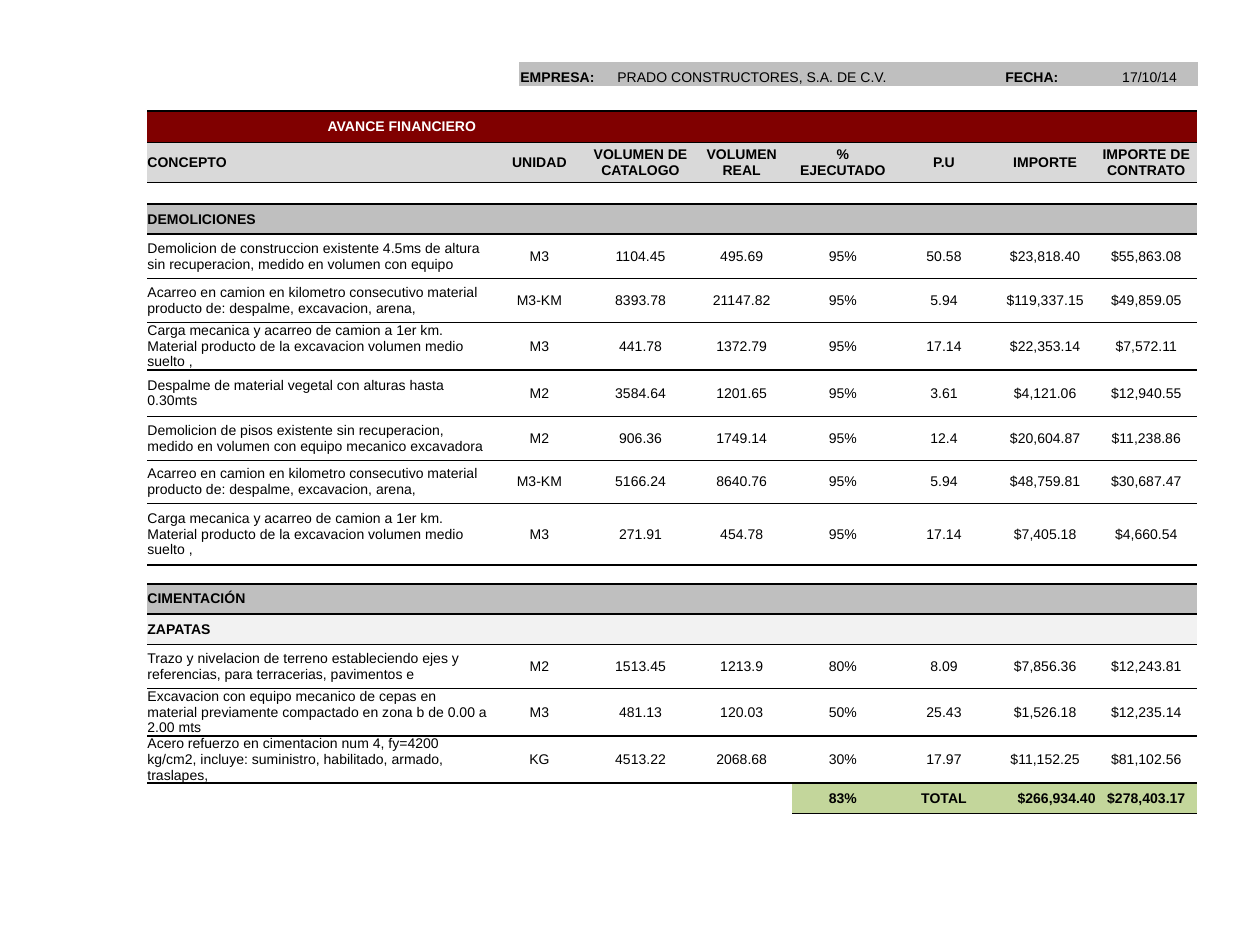
from lxml import etree
from pptx import Presentation
from pptx.dml.color import RGBColor
from pptx.enum.text import MSO_ANCHOR, PP_ALIGN
from pptx.oxml.ns import qn
from pptx.util import Inches, Pt

LEFT, CENTER, RIGHT = PP_ALIGN.LEFT, PP_ALIGN.CENTER, PP_ALIGN.RIGHT
MIDDLE, BOTTOM = MSO_ANCHOR.MIDDLE, MSO_ANCHOR.BOTTOM

BLACK = RGBColor(0x00, 0x00, 0x00)
WHITE = RGBColor(0xFF, 0xFF, 0xFF)
MAROON = RGBColor(0x80, 0x00, 0x00)
GRAY = RGBColor(0xBF, 0xBF, 0xBF)
LIGHT_GRAY = RGBColor(0xD9, 0xD9, 0xD9)
PALE_GRAY = RGBColor(0xF2, 0xF2, 0xF2)
GREEN = RGBColor(0xC3, 0xD6, 0x9B)

HEADINGS = ["CONCEPTO", "UNIDAD", "VOLUMEN DE CATALOGO", "VOLUMEN REAL",
            "% EJECUTADO", "P.U", "IMPORTE", "IMPORTE DE CONTRATO"]
HAULING = ("Acarreo en camion en kilometro consecutivo material producto de: "
           "despalme, excavacion, arena,")
LOADING = ("Carga mecanica y acarreo de camion a 1er km. Material producto de la "
           "excavacion volumen medio suelto ,")
TOTALS = ["", "", "", "", "83%", "TOTAL", "$266,934.40", "$278,403.17"]

# Each row: kind, height in inches, texts
ROWS = [
    ("title", 0.25, ["AVANCE FINANCIERO"]),
    ("headings", 0.32, HEADINGS),
    ("spacer", 0.17, []),
    ("section", 0.24, ["DEMOLICIONES"]),
    ("item", 0.35, ["Demolicion de construccion existente 4.5ms de altura sin "
                    "recuperacion, medido en volumen con equipo",
                    "M3", "1104.45", "495.69", "95%", "50.58", "$23,818.40", "$55,863.08"]),
    ("item", 0.35, [HAULING, "M3-KM", "8393.78", "21147.82", "95%", "5.94",
                    "$119,337.15", "$49,859.05"]),
    ("item", 0.35, [LOADING, "M3", "441.78", "1372.79", "95%", "17.14",
                    "$22,353.14", "$7,572.11"]),
    ("item", 0.37, ["Despalme de material vegetal con alturas hasta 0.30mts",
                    "M2", "3584.64", "1201.65", "95%", "3.61", "$4,121.06", "$12,940.55"]),
    ("item", 0.35, ["Demolicion de pisos existente sin recuperacion, medido en "
                    "volumen con equipo mecanico excavadora",
                    "M2", "906.36", "1749.14", "95%", "12.4", "$20,604.87", "$11,238.86"]),
    ("item", 0.34, [HAULING, "M3-KM", "5166.24", "8640.76", "95%", "5.94",
                    "$48,759.81", "$30,687.47"]),
    ("item", 0.49, [LOADING, "M3", "271.91", "454.78", "95%", "17.14",
                    "$7,405.18", "$4,660.54"]),
    ("spacer", 0.15, []),
    ("section", 0.24, ["CIMENTACIÓN"]),
    ("subsection", 0.24, ["ZAPATAS"]),
    ("item", 0.35, ["Trazo y nivelacion de terreno estableciendo ejes y referencias, "
                    "para terracerias, pavimentos e",
                    "M2", "1513.45", "1213.9", "80%", "8.09", "$7,856.36", "$12,243.81"]),
    ("item", 0.35, ["Excavacion con equipo mecanico de cepas en material previamente "
                    "compactado en zona b de 0.00 a 2.00 mts",
                    "M3", "481.13", "120.03", "50%", "25.43", "$1,526.18", "$12,235.14"]),
    ("item", 0.35, ["Acero refuerzo en cimentacion num 4, fy=4200 kg/cm2, incluye: "
                    "suministro, habilitado, armado, traslapes,",
                    "KG", "4513.22", "2068.68", "30%", "17.97", "$11,152.25", "$81,102.56"]),
    ("total", 0.24, TOTALS),
]
FILLS = {"title": MAROON, "headings": LIGHT_GRAY, "section": GRAY,
         "subsection": PALE_GRAY, "total": GREEN}


def set_borders(cell, ruled):
    """Draw 1 pt rules on the named sides and clear the other sides."""
    properties = cell._tc.get_or_add_tcPr()
    for side in ("L", "R", "T", "B"):
        line = etree.SubElement(properties, qn(f"a:ln{side}"), w=str(Pt(1)))
        if side in ruled:
            fill = etree.SubElement(line, qn("a:solidFill"))
            etree.SubElement(fill, qn("a:srgbClr"), val=str(BLACK))
        else:
            etree.SubElement(line, qn("a:noFill"))


def write_cell(cell, text, bold=False, color=BLACK, align=LEFT, anchor=MIDDLE,
               fill=None, ruled="", margins=(0, 0, 0, 0), indent=0):
    set_borders(cell, ruled)
    if fill is None:
        cell.fill.background()
    else:
        cell.fill.solid()
        cell.fill.fore_color.rgb = fill
    (cell.margin_left, cell.margin_top,
     cell.margin_right, cell.margin_bottom) = [Inches(m) for m in margins]
    cell.vertical_anchor = anchor
    para = cell.text_frame.paragraphs[0]
    para.alignment = align
    if indent:
        para._p.get_or_add_pPr().set("marL", str(Inches(indent)))
    para.font.size = Pt(8)
    if text:
        span = para.add_run()
        span.text = text
        span.font.name = "Arial"
        span.font.size = Pt(8)
        span.font.bold = bold
        span.font.color.rgb = color


def add_plain_table(page, left, top, widths, heights):
    frame = page.shapes.add_table(len(heights), len(widths), Inches(left), Inches(top),
                                  Inches(sum(widths)), Inches(sum(heights)))
    table = frame.table
    table.first_row = table.horz_banding = False
    for column, width in zip(table.columns, widths):
        column.width = Inches(width)
    for row, height in zip(table.rows, heights):
        row.height = Inches(height)
    return table


def add_progress_table(page, left, top, width):
    concept_width = 2.71
    number_width = (width - concept_width) / 7
    table = add_plain_table(page, left, top, [concept_width] + [number_width] * 7,
                            [height for _, height, _ in ROWS])
    for r, (kind, _, texts) in enumerate(ROWS):
        for c in range(len(HEADINGS)):
            text = texts[c] if c < len(texts) else ""
            blank_total = kind == "total" and not text
            align = LEFT if c == 0 else CENTER
            if kind == "total" and HEADINGS[c] == "IMPORTE":
                align = RIGHT
            write_cell(table.cell(r, c), text,
                       bold=kind != "item",
                       color=WHITE if kind == "title" else BLACK,
                       align=align,
                       fill=None if blank_total else FILLS.get(kind),
                       ruled="T" if blank_total else "TB",
                       indent=1.43 if kind == "title" and c == 0 else 0)
        # The title and the spacer below the headings span all columns
        if kind == "title" or r == 2:
            table.cell(r, 0).merge(table.cell(r, len(HEADINGS) - 1))


def add_company_strip(page, left, top):
    table = add_plain_table(page, left, top, [0.77, 2.89, 0.19, 0.77, 0.77], [0.19])
    fields = [("EMPRESA:", True, LEFT),
              ("PRADO CONSTRUCTORES, S.A. DE C.V.", False, LEFT),
              ("", False, LEFT),
              ("FECHA:", True, LEFT),
              ("17/10/14", False, CENTER)]
    for c, (text, bold, align) in enumerate(fields):
        write_cell(table.cell(0, c), text, bold=bold, align=align, anchor=BOTTOM,
                   fill=GRAY, margins=(0.01, 0.01, 0.01, 0))


def main():
    deck = Presentation()
    deck.slide_width, deck.slide_height = Inches(10), Inches(7.5)
    page = deck.slides.add_slide(deck.slide_layouts[6])
    add_progress_table(page, 1.17, 0.88, 8.33)
    add_company_strip(page, 4.12, 0.49)
    deck.save("out.pptx")


if __name__ == "__main__":
    main()
